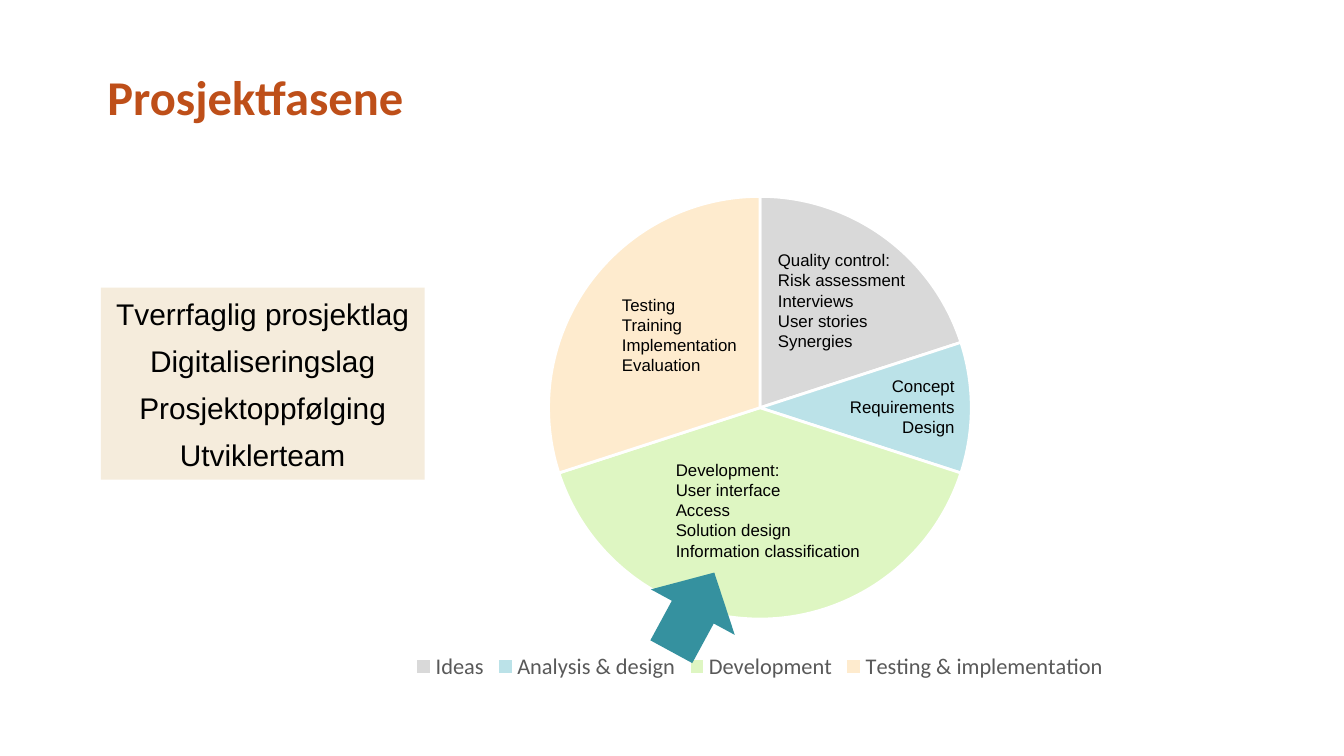
"""Build the slide on project phases: a pie chart with notes, a pointer and a team list."""
from lxml import etree
from pptx import Presentation, util as u
from pptx.chart.data import CategoryChartData
from pptx.dml.color import RGBColor
from pptx.enum import chart as ch, shapes, text

PX = u.Inches(1) // 200
COLORS = {
    "title": "BE4F19", "black": "000000", "legend": "595959", "white": "FFFFFF",
    "arrow": "35919F", "team": "F5ECDC",
}
PHASES = [
    ("Ideas", 20, "D9D9D9"),
    ("Analysis & design", 10, "BBE2E8"),
    ("Development", 40, "DEF6C2"),
    ("Testing & implementation", 30, "FEEBCE"),
]
LEFT, CENTER, RIGHT = text.PP_ALIGN.LEFT, text.PP_ALIGN.CENTER, text.PP_ALIGN.RIGHT
NOTES = [
    ((1138, 362, 232, 202), LEFT,
     ["Quality control:", "Risk assessment", "Interviews", "User stories", "Synergies"]),
    ((986, 674, 316, 172), LEFT,
     ["Development:", "User interface", "Access", "Solution design",
      "Information classification"]),
    ((1242, 550, 198, 112), RIGHT, ["Concept", "Requirements", "Design"]),
    ((906, 428, 212, 142), LEFT, ["Testing", "Training", "Implementation", "Evaluation"]),
]
TEAMS = ["Tverrfaglig prosjektlag", "Digitaliseringslag", "Prosjektoppfølging", "Utviklerteam"]


def px(*lengths):
    return [u.Emu(length * PX) for length in lengths]


def color(name):
    return RGBColor.from_string(COLORS.get(name, name))


def style_font(font, size, name, tint, bold=False):
    font.size, font.name, font.bold = u.Pt(size), name, bold
    font.color.rgb = color(tint)


def write_lines(frame, lines, size, align=LEFT, face="Arial", tint="black", bold=False, gap=0):
    for index, line in enumerate(lines):
        paragraph = frame.add_paragraph() if index else frame.paragraphs[0]
        paragraph.text = line
        paragraph.alignment = align
        if index and gap:
            paragraph.space_before = u.Pt(gap)
        style_font(paragraph.font, size, face, tint, bold)


def add_title(slide, box, wording):
    frame = slide.shapes.add_textbox(*px(*box)).text_frame
    frame.word_wrap = True
    frame.vertical_anchor = text.MSO_ANCHOR.BOTTOM
    write_lines(frame, [wording], 26, face="Calibri", tint="title", bold=True)
    frame.paragraphs[0].line_spacing = u.Pt(30)


def add_note(slide, box, align, lines):
    frame = slide.shapes.add_textbox(*px(*box)).text_frame
    frame.word_wrap = False
    write_lines(frame, lines, 9, align)


def add_block(slide, preset, box, fill, rotation=0):
    block = slide.shapes.add_shape(preset, *px(*box))
    block.shadow.inherit = False
    block.fill.solid()
    block.fill.fore_color.rgb = color(fill)
    block.line.fill.background()
    block.rotation = rotation
    return block


def add_team_list(slide, box, teams):
    frame = add_block(slide, shapes.MSO_SHAPE.RECTANGLE, box, "team").text_frame
    frame.word_wrap = False
    write_lines(frame, teams, 16, CENTER, gap=6)


def place_plot(chart, **fractions):
    area = chart.plots[0]._element.getparent()
    namespace = etree.QName(area).namespace
    for old in area.findall(f"{{{namespace}}}layout"):
        area.remove(old)
    layout = etree.Element(f"{{{namespace}}}layout")
    area.insert(0, layout)
    manual = etree.SubElement(layout, f"{{{namespace}}}manualLayout")
    settings = {"layoutTarget": "inner", "xMode": "edge", "yMode": "edge", **fractions}
    for tag, value in settings.items():
        etree.SubElement(manual, f"{{{namespace}}}{tag}", val=str(value))


def add_phase_pie(slide, box, phases):
    names, shares, fills = zip(*phases)
    data = CategoryChartData()
    data.categories = names
    data.add_series("Series 1", shares)
    chart = slide.shapes.add_chart(ch.XL_CHART_TYPE.PIE, *px(*box), data).chart
    chart.has_title = False
    style_font(chart.font, 10, "Calibri", "black")
    chart.has_legend = True
    chart.legend.position = ch.XL_LEGEND_POSITION.BOTTOM
    chart.legend.include_in_layout = False
    style_font(chart.legend.font, 12, "Calibri", "legend")
    plot = chart.plots[0]
    plot.vary_by_categories = True
    for index, fill in enumerate(fills):
        wedge = plot.series[0].points[index].format
        wedge.fill.solid()
        wedge.fill.fore_color.rgb = color(fill)
        wedge.line.color.rgb = color("white")
        wedge.line.width = u.Pt(1.5)
    place_plot(chart, x=0.3, y=0.04, w=0.4, h=0.83)


def main():
    deck = Presentation()
    deck.slide_width, deck.slide_height = px(2000, 1125)
    slide = deck.slides.add_slide(deck.slide_layouts[6])
    add_title(slide, (140, 48, 1722, 148), "Prosjektfasene")
    add_phase_pie(slide, (270, 262, 1722, 758), PHASES)
    for box, align, lines in NOTES:
        add_note(slide, box, align, lines)
    add_block(slide, shapes.MSO_SHAPE.UP_ARROW, (960, 844, 142, 134), "arrow", 28.5)
    add_team_list(slide, (150, 428, 482, 286), TEAMS)
    deck.save("out.pptx")


if __name__ == "__main__":
    main()
